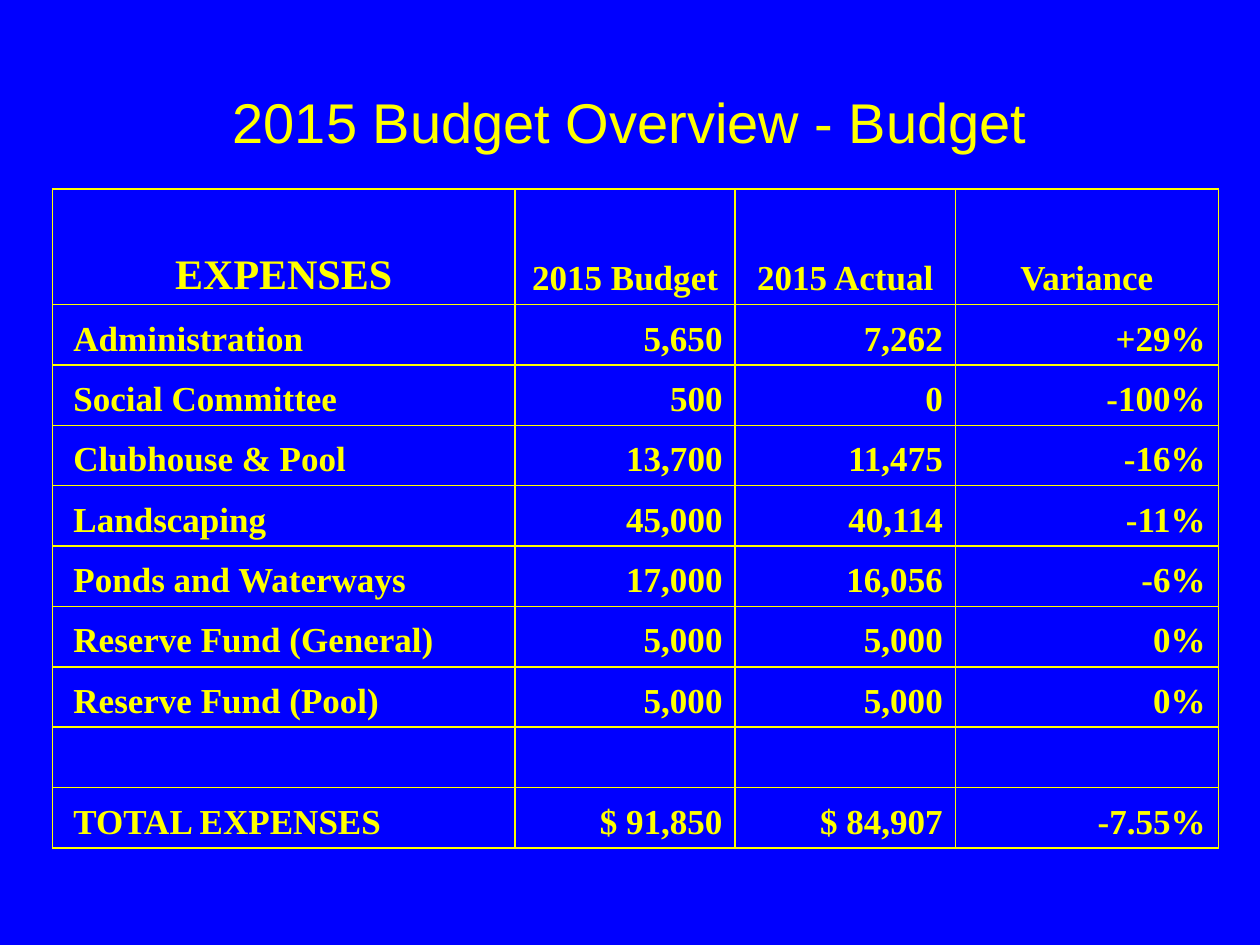
import pptx
import pptx.dml.color
import pptx.enum.text
import pptx.oxml
import pptx.oxml.ns
import pptx.util
from pptx.util import Cm

Align = pptx.enum.text.PP_ALIGN
Anchor = pptx.enum.text.MSO_ANCHOR

THEME = {
    "background": "0000FF", "ink": "FFFF00", "border_pt": 1,
    "title_font": "Arial", "table_font": "Times New Roman",
    "title_pt": 32, "heading_pt": 24, "body_pt": 20,
}


def write(frame, text, align, **font_format):
    paragraph = frame.paragraphs[0]
    paragraph.alignment = align
    run = paragraph.add_run()
    run.text = text
    for attribute, value in font_format.items():
        setattr(run.font, attribute, value)
    run.font.color.rgb = pptx.dml.color.RGBColor.from_string(THEME["ink"])


def draw_borders(cell):
    properties = cell._tc.get_or_add_tcPr()
    width = pptx.util.Pt(THEME["border_pt"])
    for position, side in enumerate(("lnL", "lnR", "lnT", "lnB")):
        properties.insert(position, pptx.oxml.parse_xml(
            f'<a:{side} {pptx.oxml.ns.nsdecls("a")} w="{width}"><a:solidFill>'
            f'<a:srgbClr val="{THEME["ink"]}"/></a:solidFill></a:{side}>'))


# Slide
deck = pptx.Presentation()
deck.slide_width, deck.slide_height = Cm(25.4), Cm(19.05)
slide = deck.slides.add_slide(deck.slide_layouts[5])
backdrop = slide.background.fill
backdrop.solid()
backdrop.fore_color.rgb = pptx.dml.color.RGBColor.from_string(THEME["background"])

# Title
title = slide.shapes.title
title_place = {"left": Cm(1.9), "top": Cm(1.7), "width": Cm(21.6), "height": Cm(1.48)}
for attribute, value in title_place.items():
    setattr(title, attribute, value)
title.text_frame.vertical_anchor = Anchor.MIDDLE
write(title.text_frame, "2015 Budget Overview - Budget", Align.CENTER,
      name=THEME["title_font"], size=pptx.util.Pt(THEME["title_pt"]))

# Budget table
budget = [
    ("EXPENSES", "2015 Budget", "2015 Actual", "Variance"),
    ("Administration", "5,650", "7,262", "+29%"),
    ("Social Committee", "500", "0", "-100%"),
    ("Clubhouse & Pool", "13,700", "11,475", "-16%"),
    ("Landscaping", "45,000", "40,114", "-11%"),
    ("Ponds and Waterways", "17,000", "16,056", "-6%"),
    ("Reserve Fund (General)", "5,000", "5,000", "0%"),
    ("Reserve Fund (Pool)", "5,000", "5,000", "0%"),
    ("", "", "", ""),
    ("TOTAL EXPENSES", "$ 91,850", "$ 84,907", "-7.55%"),
]
column_widths = [Cm(9.32), Cm(4.44), Cm(4.44), Cm(5.3)]
row_heights = [Cm(2.33)] + [Cm(1.217)] * (len(budget) - 1)
table = slide.shapes.add_table(
    len(budget), len(column_widths), Cm(1.06), Cm(3.81),
    sum(column_widths), sum(row_heights)).table
table.first_row = table.horz_banding = False
for column, width in zip(table.columns, column_widths):
    column.width = width
for row, height in zip(table.rows, row_heights):
    row.height = height

for r, entries in enumerate(budget):
    for c, entry in enumerate(entries):
        cell = table.cell(r, c)
        cell.fill.background()
        draw_borders(cell)
        cell.vertical_anchor = Anchor.BOTTOM
        if not entry:
            continue
        if r == 0:
            align = Align.CENTER
        elif c == 0:
            align = Align.LEFT
            cell.margin_left = Cm(0.42)
        else:
            align = Align.RIGHT
        size = THEME["heading_pt"] if r == c == 0 else THEME["body_pt"]
        write(cell.text_frame, entry, align, name=THEME["table_font"],
              size=pptx.util.Pt(size), bold=True)

deck.save("out.pptx")
